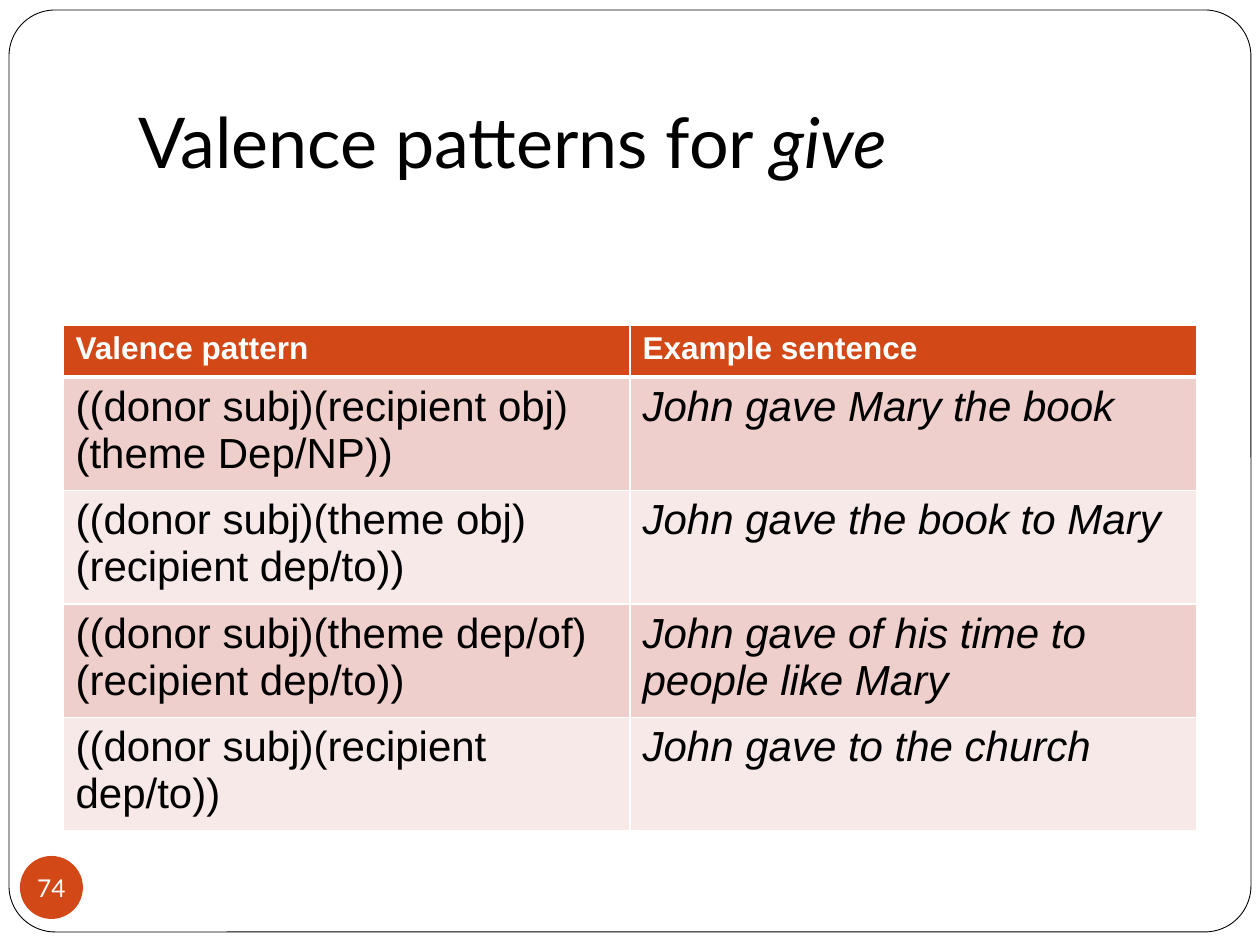
"""Build the slide on valence patterns for the verb give."""
from lxml import etree
from pptx import Presentation, util as u
from pptx.dml.color import RGBColor
from pptx.enum import shapes, text
from pptx.oxml.ns import qn

PX = u.Inches(1) / 126
BLACK = RGBColor(0x00, 0x00, 0x00)
WHITE = RGBColor(0xFF, 0xFF, 0xFF)
ORANGE = RGBColor(0xD3, 0x48, 0x17)
ROSE = RGBColor(0xEF, 0xCF, 0xCC)
PALE_ROSE = RGBColor(0xF7, 0xE9, 0xE8)

HEADINGS = ("Valence pattern", "Example sentence")
PATTERNS = (
    ("((donor subj)(recipient obj)(theme Dep/NP))", "John gave Mary the book"),
    ("((donor subj)(theme obj)(recipient dep/to))", "John gave the book to Mary"),
    ("((donor subj)(theme dep/of)(recipient dep/to))",
     "John gave of his time to people like Mary"),
    ("((donor subj)(recipient dep/to))", "John gave to the church"),
)
HEADER_HEIGHT, ROW_HEIGHT, COLUMN_WIDTH = 52, 106, 567


def px(*lengths):
    return [u.Emu(round(length * PX)) for length in lengths]


def set_font(font, name, size, color, bold=False, italic=False):
    font.name, font.size = name, u.Pt(size)
    font.bold, font.italic = bold, italic
    font.color.rgb = color


def paint(shape, color):
    shape.shadow.inherit = False
    shape.fill.solid()
    shape.fill.fore_color.rgb = color


def add_frame(slide):
    frame = slide.shapes.add_shape(
        shapes.MSO_SHAPE.ROUNDED_RECTANGLE, *px(9, 10, 1242, 922))
    frame.adjustments[0] = 0.05
    paint(frame, WHITE)
    frame.line.color.rgb = BLACK
    frame.line.width = u.Pt(0.5)


def add_title(slide, lead, verb):
    title = slide.shapes.add_textbox(*px(126, 38, 1071, 157)).text_frame
    title.word_wrap = True
    title.vertical_anchor = text.MSO_ANCHOR.BOTTOM
    title.margin_bottom = u.Inches(0.1)
    heading = title.paragraphs[0]
    set_font(heading.font, "Lato", 40, BLACK)
    heading.add_run().text = lead
    verb_run = heading.add_run()
    verb_run.text = verb
    verb_run.font.italic = True


def add_page_number(slide, number):
    badge = slide.shapes.add_shape(shapes.MSO_SHAPE.OVAL, *px(20, 856, 63, 63))
    paint(badge, ORANGE)
    badge.line.fill.background()
    label = badge.text_frame
    label.word_wrap = False
    label.vertical_anchor = text.MSO_ANCHOR.MIDDLE
    label.margin_left = label.margin_right = label.margin_top = label.margin_bottom = 0
    label.text = number
    label.paragraphs[0].alignment = text.PP_ALIGN.CENTER
    set_font(label.paragraphs[0].font, "Lato", 14, WHITE)


def set_borders(cell, bottom):
    properties = cell._tc.get_or_add_tcPr()
    for side, width in zip("LRTB", (1, 1, 1, bottom)):
        border = etree.SubElement(properties, qn(f"a:ln{side}"), w=str(int(u.Pt(width))))
        fill = etree.SubElement(border, qn("a:solidFill"))
        etree.SubElement(fill, qn("a:srgbClr"), val=str(WHITE))


def fill_cell(cell, words, background, size, color, bottom=1, **style):
    set_borders(cell, bottom)
    cell.fill.solid()
    cell.fill.fore_color.rgb = background
    cell.text = words
    set_font(cell.text_frame.paragraphs[0].font, "Arial", size, color, **style)


def add_pattern_table(slide):
    height = HEADER_HEIGHT + ROW_HEIGHT * len(PATTERNS)
    table = slide.shapes.add_table(
        len(PATTERNS) + 1, len(HEADINGS),
        *px(63, 325, COLUMN_WIDTH * len(HEADINGS), height)).table
    for row in table.rows:
        row.height, = px(ROW_HEIGHT)
    table.rows[0].height, = px(HEADER_HEIGHT)
    for column, heading in enumerate(HEADINGS):
        fill_cell(table.cell(0, column), heading, ORANGE, 18, WHITE, bottom=3, bold=True)
    for row, (pattern, example) in enumerate(PATTERNS, start=1):
        band = ROSE if row % 2 else PALE_ROSE
        fill_cell(table.cell(row, 0), pattern, band, 24, BLACK)
        fill_cell(table.cell(row, 1), example, band, 24, BLACK, italic=True)


def main():
    deck = Presentation()
    deck.slide_width, deck.slide_height = px(1260, 945)
    slide = deck.slides.add_slide(deck.slide_layouts[6])
    add_frame(slide)
    add_title(slide, "Valence patterns for ", "give")
    add_page_number(slide, "74")
    add_pattern_table(slide)
    deck.save("out.pptx")


if __name__ == "__main__":
    main()
